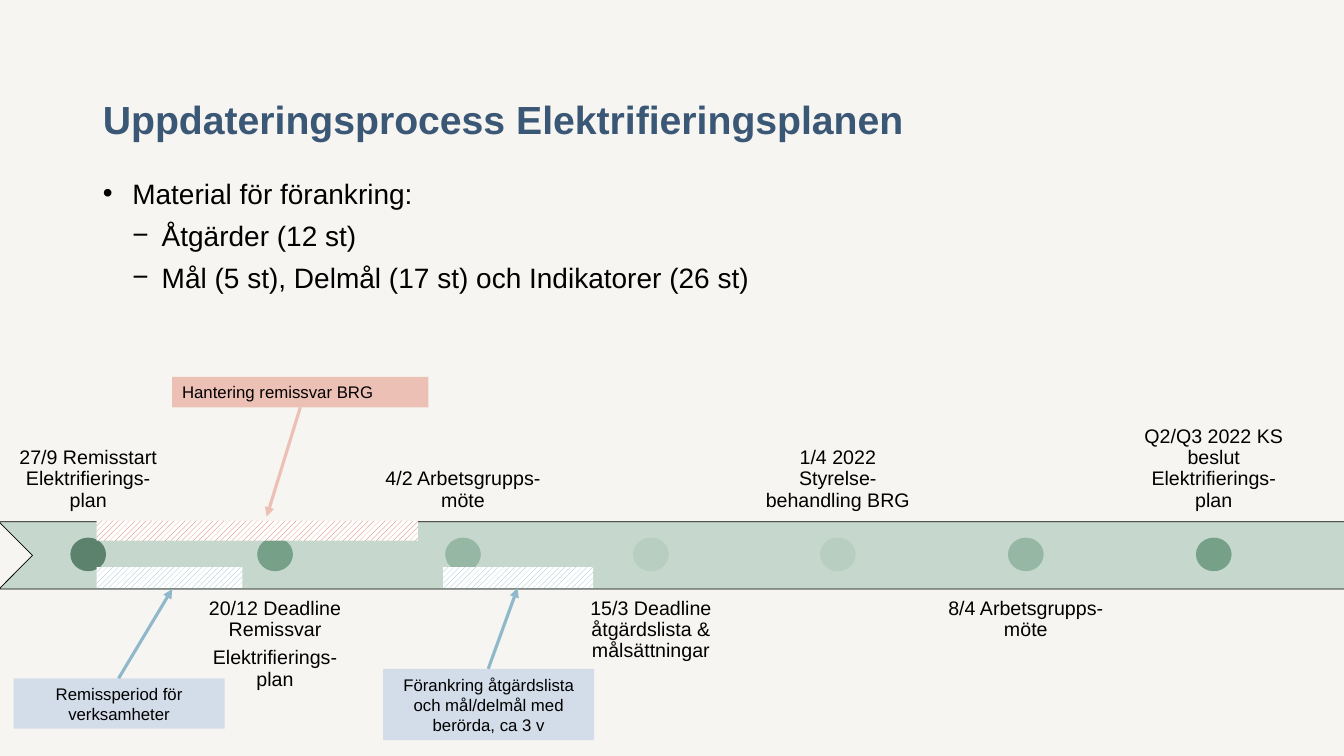
from lxml import etree
from pptx import Presentation
from pptx import util as u
from pptx.dml.color import RGBColor
from pptx.enum import dml, shapes, text
from pptx.oxml import ns

PX = 9525  # EMU per px, 96 px to the inch
FONT = "Arial"

CREAM = RGBColor(0xF6, 0xF5, 0xF1)
WHITE = RGBColor(0xFF, 0xFF, 0xFF)
BLACK = RGBColor(0x00, 0x00, 0x00)
NAVY = RGBColor(0x3B, 0x57, 0x76)
PALE_BLUE = RGBColor(0xD3, 0xDD, 0xE9)
BLUE = RGBColor(0x8F, 0xB8, 0xCA)
PINK = RGBColor(0xED, 0xC0, 0xB6)
RED = RGBColor(0xD3, 0x62, 0x48)
MINT = RGBColor(0xC6, 0xD8, 0xCD)
GREEN_1 = RGBColor(0x5C, 0x82, 0x6D)
GREEN_2 = RGBColor(0x77, 0xA0, 0x89)
GREEN_3 = RGBColor(0x97, 0xB7, 0xA5)
GREEN_4 = RGBColor(0xB8, 0xCE, 0xC1)

LEFT, CENTER = text.PP_ALIGN.LEFT, text.PP_ALIGN.CENTER
TOP, MIDDLE, BOTTOM = (text.MSO_ANCHOR.TOP, text.MSO_ANCHOR.MIDDLE,
                       text.MSO_ANCHOR.BOTTOM)

BODY = ["Material för förankring:", "Åtgärder (12 st)",
        "Mål (5 st), Delmål (17 st) och Indikatorer (26 st)"]
BODY_BULLETS = [("•", 28), ("−", 56), ("−", 56)]

# Labels alternate above and below the arrow
MILESTONES = [
    (GREEN_1, ["27/9 Remisstart Elektrifierings-plan"]),
    (GREEN_2, ["20/12 Deadline Remissvar", "Elektrifierings-plan"]),
    (GREEN_3, ["4/2 Arbetsgrupps-möte"]),
    (GREEN_4, ["15/3 Deadline åtgärdslista & målsättningar"]),
    (GREEN_4, ["1/4 2022 Styrelse-behandling BRG"]),
    (GREEN_3, ["8/4 Arbetsgrupps-möte"]),
    (GREEN_2, ["Q2/Q3 2022 KS beslut Elektrifierings-plan"]),
]
MILESTONE_SPAN = 1072  # px from the first milestone to the last


def px(*lengths):
    return [u.Emu(n * PX) for n in lengths]


def add_bullet(p, char, indent):
    """Hang a bullet 28 px to the left of the paragraph's text."""
    pPr = p._p.get_or_add_pPr()
    pPr.set("marL", str(indent * PX))
    pPr.set("indent", str(-28 * PX))
    etree.SubElement(pPr, ns.qn("a:buFont")).set("typeface", FONT)
    etree.SubElement(pPr, ns.qn("a:buChar")).set("char", char)


def write(tf, lines, size=12, color=BLACK, bold=False, align=LEFT,
          anchor=TOP, spacing=None, before=0, after=0, bullets=()):
    tf.word_wrap = True
    tf.vertical_anchor = anchor
    for i, line in enumerate(lines):
        p = tf.add_paragraph() if i else tf.paragraphs[0]
        if bullets:
            add_bullet(p, *bullets[i])
        p.alignment = align
        p.line_spacing = spacing
        p.space_before = u.Pt(before if i else 0)
        p.space_after = u.Pt(after)
        r = p.add_run()
        r.text = line
        r.font.name, r.font.size, r.font.bold = FONT, u.Pt(size), bold
        r.font.color.rgb = color


def add_text(s, box, lines, margins=(10, 5, 10, 5), **fmt):
    tf = s.shapes.add_textbox(*px(*box)).text_frame
    (tf.margin_left, tf.margin_top,
     tf.margin_right, tf.margin_bottom) = px(*margins)
    write(tf, lines, **fmt)


def add_shape(s, kind, box, color):
    sp = s.shapes.add_shape(kind, *px(*box))
    sp.shadow.inherit = False
    sp.fill.solid()
    sp.fill.fore_color.rgb = color
    sp.line.fill.background()
    return sp


def add_note(s, box, line, color, align=CENTER):
    sp = add_shape(s, shapes.MSO_SHAPE.RECTANGLE, box, color)
    write(sp.text_frame, [line], align=align, anchor=MIDDLE)


def add_period(s, box, color):
    sp = add_shape(s, shapes.MSO_SHAPE.RECTANGLE, box, WHITE)
    sp.fill.patterned()
    sp.fill.pattern = dml.MSO_PATTERN.WIDE_UPWARD_DIAGONAL
    sp.fill.fore_color.rgb = color
    sp.fill.back_color.rgb = WHITE


def add_pointer(s, ends, color):
    c = s.shapes.add_connector(shapes.MSO_CONNECTOR.STRAIGHT, *px(*ends))
    c.line.color.rgb = color
    c.line.width = u.Pt(2.25)
    etree.SubElement(c.line._get_or_add_ln(),
                     ns.qn("a:tailEnd")).set("type", "triangle")
    etree.SubElement(c._element.spPr, ns.qn("a:effectLst"))


def add_timeline(s):
    arrow = add_shape(s, shapes.MSO_SHAPE.NOTCHED_RIGHT_ARROW,
                      (-1, 465, 1381, 128), MINT)
    arrow.line.color.rgb = BLACK
    arrow.line.width = u.Pt(0.5)
    for i, (color, label) in enumerate(MILESTONES):
        x = MILESTONE_SPAN * i // (len(MILESTONES) - 1) - 1
        y, anchor = (560, TOP) if i % 2 else (369, BOTTOM)
        add_text(s, (x, y, 170, 128), label, margins=(10, 10, 10, 10),
                 size=14, align=CENTER, anchor=anchor, spacing=0.9, after=5)
        add_shape(s, shapes.MSO_SHAPE.OVAL, (x + 68, 512, 34, 32), color)


def main():
    prs = Presentation()
    prs.slide_width, prs.slide_height = px(1280, 720)
    s = prs.slides.add_slide(prs.slide_layouts[6])
    s.background.fill.solid()
    s.background.fill.fore_color.rgb = CREAM

    # Heading and bullets
    add_text(s, (88, 38, 1104, 139), ["Uppdateringsprocess Elektrifieringsplanen"],
             margins=(10, 5, 10, 46), size=28, color=NAVY, bold=True,
             anchor=BOTTOM, spacing=u.Pt(31))
    add_text(s, (88, 163, 1104, 182), BODY, size=20, before=6,
             bullets=BODY_BULLETS)

    # Timeline with its hatched periods
    add_timeline(s)
    add_period(s, (92, 540, 139, 20), BLUE)
    add_period(s, (92, 496, 306, 19), RED)
    add_period(s, (422, 540, 143, 20), BLUE)

    # Notes and their pointers
    add_note(s, (13, 646, 201, 48), "Remissperiod för verksamheter", PALE_BLUE)
    add_note(s, (164, 359, 244, 29), "Hantering remissvar BRG", PINK, align=LEFT)
    add_note(s, (365, 637, 201, 68),
             "Förankring åtgärdslista och mål/delmål med berörda, ca 3 v",
             PALE_BLUE)
    add_pointer(s, (286, 388, 254, 492), PINK)
    add_pointer(s, (113, 646, 164, 561), BLUE)
    add_pointer(s, (465, 637, 493, 560), BLUE)

    prs.save("out.pptx")


if __name__ == "__main__":
    main()
